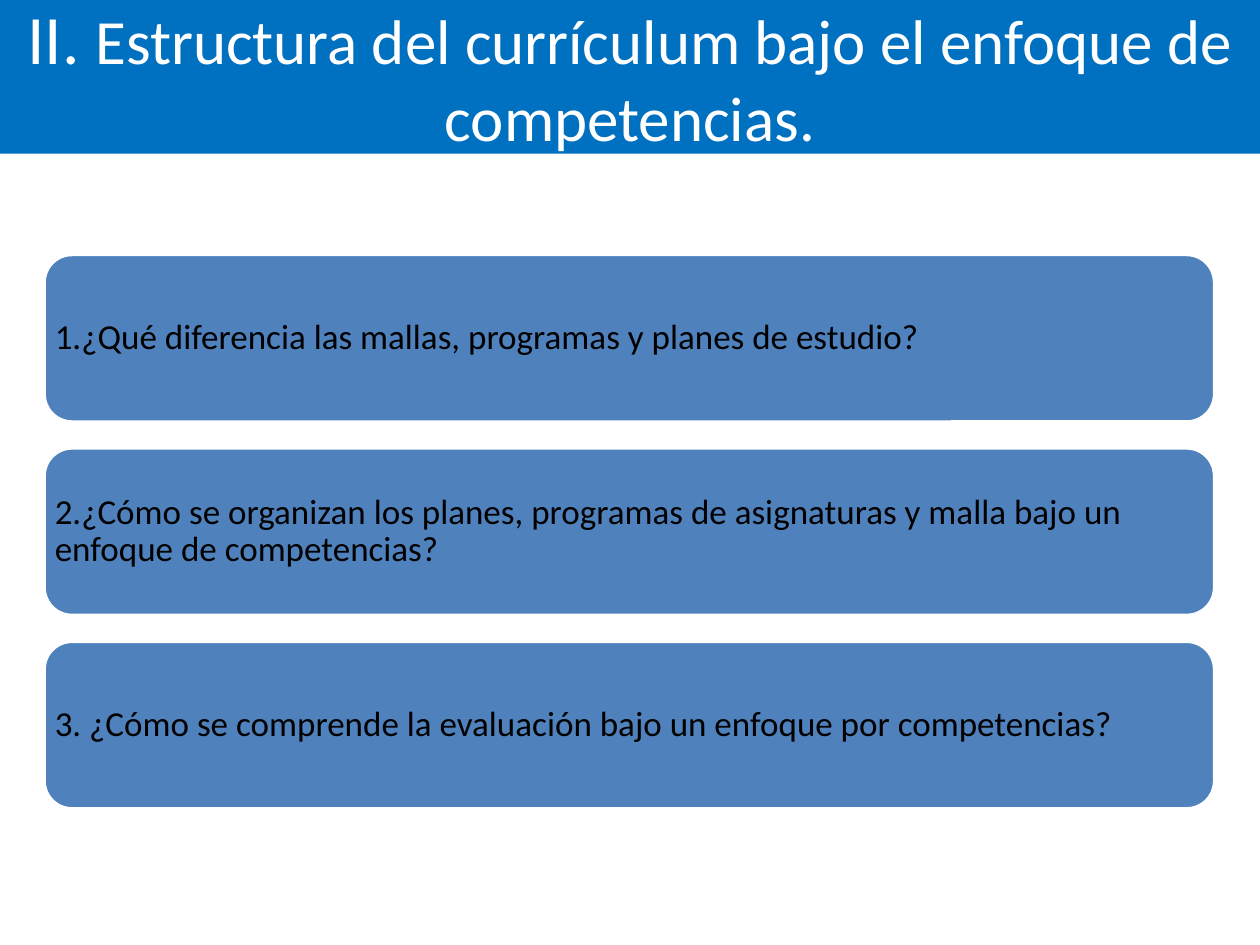
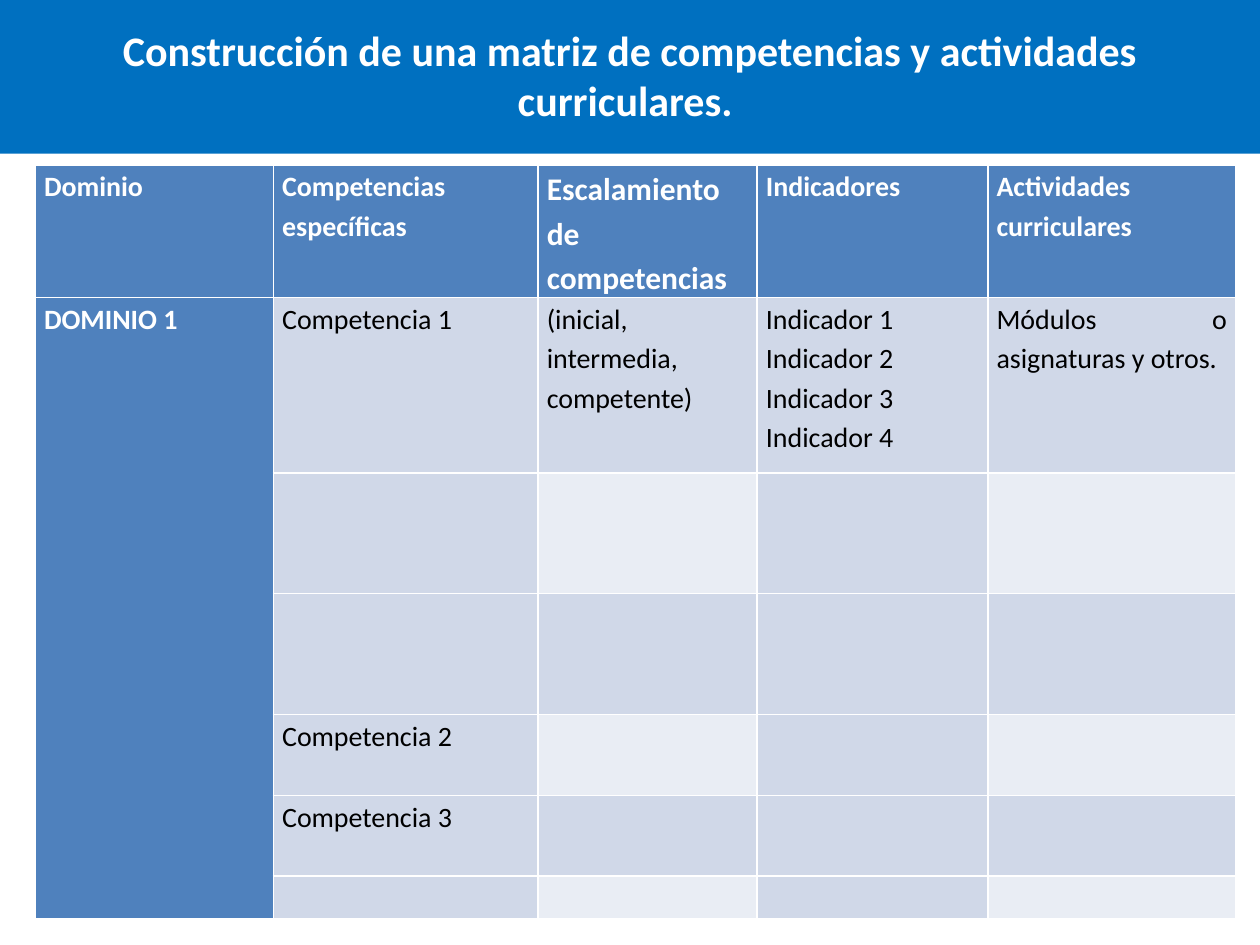
from dataclasses import dataclass

from pptx import Presentation
from pptx.dml.color import RGBColor
from pptx.enum.shapes import MSO_SHAPE
from pptx.enum.text import MSO_ANCHOR, MSO_AUTO_SIZE, PP_ALIGN
from pptx.util import Inches, Pt


@dataclass(frozen=True)
class Theme:
    font: str = "Calibri"
    band: RGBColor = RGBColor(0x00, 0x70, 0xC0)
    accent: RGBColor = RGBColor(0x4F, 0x81, 0xBD)
    cell: RGBColor = RGBColor(0xD0, 0xD8, 0xE8)
    light_cell: RGBColor = RGBColor(0xE9, 0xED, 0xF4)
    white: RGBColor = RGBColor(0xFF, 0xFF, 0xFF)
    black: RGBColor = RGBColor(0x00, 0x00, 0x00)
    numeral_size: float = 39.6
    title_size: int = 36
    matrix_title_size: int = 24
    question_size: int = 20
    cell_size: int = 16
    scaling_size: int = 18


THEME = Theme()

QUESTIONS_TITLE = [
    ("II. ", THEME.numeral_size, False),
    ("Estructura del currículum bajo el enfoque de competencias.", THEME.title_size, False),
]
QUESTIONS = [
    "1.¿Qué diferencia las mallas, programas y planes de estudio?",
    "2.¿Cómo se organizan los planes, programas de asignaturas y malla bajo un enfoque de competencias?",
    "3. ¿Cómo se comprende la evaluación bajo un enfoque por competencias?",
]

MATRIX_TITLE = [
    ("Construcción de una matriz de competencias y actividades curriculares. ",
     THEME.matrix_title_size, True),
]
MATRIX = [
    ["Dominio", "Competencias específicas", "Escalamiento de competencias",
     "Indicadores", "Actividades curriculares"],
    ["DOMINIO 1", "Competencia 1", "(inicial, intermedia, competente)",
     "Indicador 1\nIndicador 2\nIndicador 3\nIndicador 4", "Módulos o asignaturas y otros."],
    ["", "", "", "", ""],
    ["", "", "", "", ""],
    ["", "Competencia 2", "", "", ""],
    ["", "Competencia 3", "", "", ""],
    ["", "", "", "", ""],
]
COLUMN_WIDTHS = [1.89, 2.1, 1.74, 1.83, 1.97]
ROW_HEIGHTS = [1.03, 1.39, 0.96, 0.96, 0.64, 0.64, 0.34]
SCALING_COLUMN = 2


def format_run(run, size, color, bold=False):
    run.font.name = THEME.font
    run.font.size = Pt(size)
    run.font.bold = bold
    run.font.color.rgb = color


def fill_solid(target, color):
    target.fill.solid()
    target.fill.fore_color.rgb = color


def add_titled_slide(presentation, title_runs):
    """Add a slide whose title is a full-width band made of (text, size, bold) runs."""
    slide = presentation.slides.add_slide(presentation.slide_layouts[5])
    title = slide.shapes.title
    title.left, title.top = Inches(0), Inches(-0.03)
    title.width, title.height = presentation.slide_width, Inches(1.25)
    fill_solid(title, THEME.band)
    title.text_frame.auto_size = MSO_AUTO_SIZE.NONE
    title.text_frame.vertical_anchor = MSO_ANCHOR.MIDDLE
    paragraph = title.text_frame.paragraphs[0]
    paragraph.alignment = PP_ALIGN.CENTER
    for text, size, bold in title_runs:
        run = paragraph.add_run()
        run.text = text
        format_run(run, size, THEME.white, bold)
    return slide


def add_question(slide, text, top, height):
    box = slide.shapes.add_shape(MSO_SHAPE.ROUNDED_RECTANGLE,
                                 Inches(0.35), Inches(top), Inches(9.29), Inches(height))
    box.shadow.inherit = False
    fill_solid(box, THEME.accent)
    box.line.color.rgb = THEME.white
    box.line.width = Pt(2)
    frame = box.text_frame
    frame.text = text
    frame.word_wrap = True
    frame.vertical_anchor = MSO_ANCHOR.MIDDLE
    frame.margin_left = frame.margin_right = Inches(0.02)
    paragraph = frame.paragraphs[0]
    paragraph.alignment = PP_ALIGN.LEFT
    paragraph.line_spacing = 0.9
    format_run(paragraph.runs[0], THEME.question_size, THEME.black)


def build_questions_slide(presentation):
    slide = add_titled_slide(presentation, QUESTIONS_TITLE)
    first_top, height, gap = 2.02, 1.33, 0.205
    for index, question in enumerate(QUESTIONS):
        add_question(slide, question, first_top + index * (height + gap), height)


def format_cell(cell, row, column):
    is_heading = row == 0 or column == 0
    is_light = row % 2 == 0 and column in (2, 4)
    if is_heading:
        fill_solid(cell, THEME.accent)
    else:
        fill_solid(cell, THEME.light_cell if is_light else THEME.cell)
    cell.margin_left = cell.margin_right = Inches(0.07)
    cell.margin_top = cell.margin_bottom = 0
    is_scaling_heading = row == 0 and column == SCALING_COLUMN
    size = THEME.scaling_size if is_scaling_heading else THEME.cell_size
    for paragraph in cell.text_frame.paragraphs:
        paragraph.alignment = PP_ALIGN.JUSTIFY
        paragraph.line_spacing = 1.15
        paragraph.font.size = Pt(size)
        for run in paragraph.runs:
            format_run(run, size, THEME.white if is_heading else THEME.black, is_heading)


def build_matrix_slide(presentation):
    slide = add_titled_slide(presentation, MATRIX_TITLE)
    table = slide.shapes.add_table(
        len(ROW_HEIGHTS), len(COLUMN_WIDTHS), Inches(0.28), Inches(1.31),
        Inches(sum(COLUMN_WIDTHS)), Inches(sum(ROW_HEIGHTS))).table
    table.first_col = True
    for column, width in zip(table.columns, COLUMN_WIDTHS):
        column.width = Inches(width)
    for row, height in zip(table.rows, ROW_HEIGHTS):
        row.height = Inches(height)
    for row, texts in enumerate(MATRIX):
        for column, text in enumerate(texts):
            cell = table.cell(row, column)
            cell.text_frame.text = text
            format_cell(cell, row, column)
    table.cell(1, 0).merge(table.cell(len(MATRIX) - 1, 0))


def main():
    presentation = Presentation()
    presentation.slide_width = Inches(10)
    presentation.slide_height = Inches(7.5)
    build_questions_slide(presentation)
    build_matrix_slide(presentation)
    presentation.save("out.pptx")


if __name__ == "__main__":
    main()
